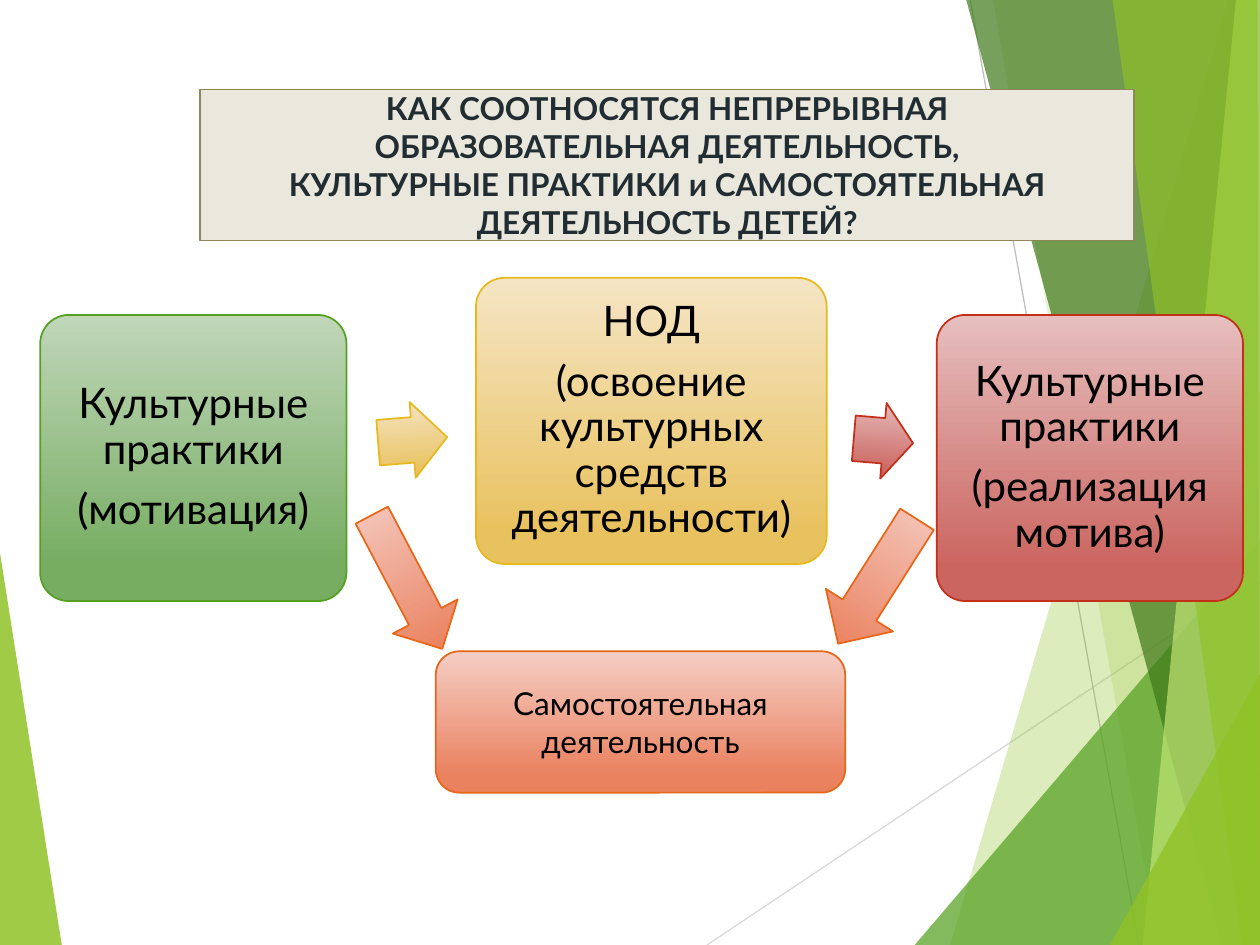
from pptx import Presentation
from pptx.dml.color import RGBColor
from pptx.enum.shapes import MSO_CONNECTOR, MSO_SHAPE
from pptx.enum.text import MSO_ANCHOR, MSO_AUTO_SIZE, PP_ALIGN
from pptx.oxml import parse_xml
from pptx.oxml.ns import nsdecls, qn
from pptx.util import Pt
from lxml import etree

ROUND = MSO_SHAPE.ROUNDED_RECTANGLE
RIGHT = MSO_SHAPE.RIGHT_ARROW
DOWN = MSO_SHAPE.DOWN_ARROW
STRAIGHT = MSO_CONNECTOR.STRAIGHT
MIDDLE = MSO_ANCHOR.MIDDLE
CENTER = PP_ALIGN.CENTER
NO_FIT = MSO_AUTO_SIZE.NONE

FONT = "Lato"
BLACK = RGBColor(0, 0, 0)
INK = RGBColor(0x21, 0x2D, 0x32)
CREAM = RGBColor(0xEA, 0xE8, 0xDC)
OLIVE = RGBColor(0x91, 0x86, 0x55)
SILVER = RGBColor(0xD9, 0xD9, 0xD9)
GRAY = RGBColor(0xBF, 0xBF, 0xBF)
LIME = RGBColor(0x90, 0xC2, 0x26)
LEAF = RGBColor(0x54, 0xA0, 0x21)
MOSS = RGBColor(0x3F, 0x78, 0x19)
PALE = RGBColor(0xC0, 0xE4, 0x74)

# Each tone is the top colour, the lower colour and the outline.
GREEN = (RGBColor(0xC0, 0xD6, 0xB9), RGBColor(0x76, 0xAD, 0x61), LEAF)
GOLD = (RGBColor(0xF5, 0xE5, 0xC5), RGBColor(0xE9, 0xC2, 0x60), RGBColor(0xE6, 0xB9, 0x1E))
RED = (RGBColor(0xE6, 0xBF, 0xBE), RGBColor(0xCB, 0x65, 0x60), RGBColor(0xC4, 0x2F, 0x1A))
CORAL = (RGBColor(0xF5, 0xCE, 0xC5), RGBColor(0xEA, 0x81, 0x5F), RGBColor(0xE7, 0x66, 0x18))

WIDE, HIGH = 720, 540
BLADE = [(LIME, 85, [(0, 316), (35.3, HIGH), (0, HIGH)])]
RAYS = [
    (LIME, 30, [(702, 0), (543, HIGH), (WIDE, HIGH), (WIDE, 0)]),
    (LIME, 20, [(567.4, 0), (661.7, HIGH), (WIDE, HIGH), (WIDE, 0)]),
    (LEAF, 72, [(522.7, HIGH), (WIDE, 309), (WIDE, HIGH)]),
    (MOSS, 70, [(552.2, 0), (698.4, HIGH), (WIDE, HIGH), (WIDE, 0)]),
    (PALE, 70, [(706.3, 0), (653, HIGH), (WIDE, HIGH), (WIDE, 0)]),
    (LIME, 65, [(635.8, 0), (709.9, HIGH), (WIDE, HIGH), (718.6, 0)]),
    (LIME, 80, [(634.3, HIGH), (WIDE, 385.2), (WIDE, HIGH)]),
]
LINES = [(SILVER, (404, HIGH), (WIDE, 329)), (GRAY, (554.4, 0), (650.9, HIGH))]
TITLE = [
    "КАК СООТНОСЯТСЯ НЕПРЕРЫВНАЯ",
    "ОБРАЗОВАТЕЛЬНАЯ ДЕЯТЕЛЬНОСТЬ,",
    "КУЛЬТУРНЫЕ ПРАКТИКИ и САМОСТОЯТЕЛЬНАЯ ДЕЯТЕЛЬНОСТЬ ДЕТЕЙ?",
]
CARDS = [
    ((23, 180, 175, 163.5), GREEN, ["Культурные практики", "(мотивация)"]),
    ((272, 158.8, 200.4, 163.5), GOLD, ["НОД", "(освоение культурных средств деятельности)"]),
    ((535.3, 180, 175, 163.5), RED, ["Культурные практики", "(реализация мотива)"]),
]
ARROWS = [
    (RIGHT, (216, 229.7, 39.6, 43.4), 355.4, GOLD, (0.6, 0.5)),
    (RIGHT, (487.8, 230.2, 34, 43.4), 4.8, RED, (0.6, 0.5)),
    (DOWN, (211.7, 289.4, 41.8, 86.4), 332.2, CORAL, ()),
    (DOWN, (478.8, 290.2, 45.4, 84.2), 32.4, CORAL, ()),
]


def add_ray(slide, color, solid, points):
    """Draw a see-through polygon."""
    spots = [(Pt(x), Pt(y)) for x, y in points]
    pen = slide.shapes.build_freeform(*spots[0])
    pen.add_line_segments(spots[1:], close=True)
    ray = pen.convert_to_shape()
    ray.shadow.inherit = False
    ray.fill.solid()
    ray.fill.fore_color.rgb = color
    tint = ray.element.spPr.find(".//" + qn("a:srgbClr"))
    etree.SubElement(tint, qn("a:alpha"), val=str(solid * 1000))
    ray.line.fill.background()


def add_line(slide, color, start, end):
    """Draw a thin straight line."""
    line = slide.shapes.add_connector(STRAIGHT, *map(Pt, start + end))
    line.line.color.rgb = color
    line.line.width = Pt(0.75)
    etree.SubElement(line.element.spPr, qn("a:effectLst"))


def add_form(slide, kind, box, tone, bends=()):
    """Add a preset shape with a downward gradient."""
    form = slide.shapes.add_shape(kind, *map(Pt, box))
    form.shadow.inherit = False
    for place, bend in enumerate(bends):
        form.adjustments[place] = bend
    form.fill.gradient()
    form.fill.gradient_angle = 270
    for stop, spot, color in zip(form.fill.gradient_stops, (0, 0.88), tone):
        stop.position = spot
        stop.color.rgb = color
    form.line.color.rgb = tone[2]
    form.line.width = Pt(1)
    return form


def set_text(form, texts, size, color=BLACK, bold=False):
    """Write centred paragraphs into a shape."""
    frame = form.text_frame
    frame.text = "\n".join(texts)
    frame.word_wrap = True
    frame.auto_size = NO_FIT
    frame.vertical_anchor = MIDDLE
    for para in frame.paragraphs:
        para.alignment = CENTER
        para.font.name = FONT
        para.font.size = Pt(size)
        para.font.bold = bold
        para.font.color.rgb = color


def add_title(slide):
    """Turn the title placeholder into a rounded banner."""
    title = slide.shapes.title
    title.left, title.top, title.width, title.height = map(Pt, (114.5, 51.1, 533.5, 86.4))
    title.element.spPr.append(parse_xml(
        f'<a:prstGeom {nsdecls("a")} prst="roundRect"><a:avLst/></a:prstGeom>'))
    title.fill.solid()
    title.fill.fore_color.rgb = CREAM
    title.line.color.rgb = OLIVE
    title.line.width = Pt(1)
    set_text(title, TITLE, 18, INK, True)
    slide.shapes[-1].element.addnext(title.element)


def add_card(slide, box, tone, texts):
    """Add a large card with spaced paragraphs."""
    card = add_form(slide, ROUND, box, tone, (0.1,))
    set_text(card, texts, 24)
    frame = card.text_frame
    frame.margin_left = frame.margin_right = Pt(7.2)
    frame.margin_top = frame.margin_bottom = Pt(7.2)
    for para in frame.paragraphs:
        para.line_spacing = 0.9
        para.space_after = Pt(8.4)


def main():
    """Build the slide and save it."""
    deck = Presentation()
    deck.slide_width, deck.slide_height = Pt(WIDE), Pt(HIGH)
    slide = deck.slides.add_slide(deck.slide_layouts[5])
    for ray in BLADE:
        add_ray(slide, *ray)
    for line in LINES:
        add_line(slide, *line)
    for ray in RAYS:
        add_ray(slide, *ray)
    add_title(slide)
    for card in CARDS:
        add_card(slide, *card)
    goal = add_form(slide, ROUND, (249, 372.2, 234, 80.8), CORAL)
    set_text(goal, ["Самостоятельная деятельность"], 18)
    for kind, box, turn, tone, bends in ARROWS:
        add_form(slide, kind, box, tone, bends).rotation = turn
    deck.save("out.pptx")


if __name__ == "__main__":
    main()
